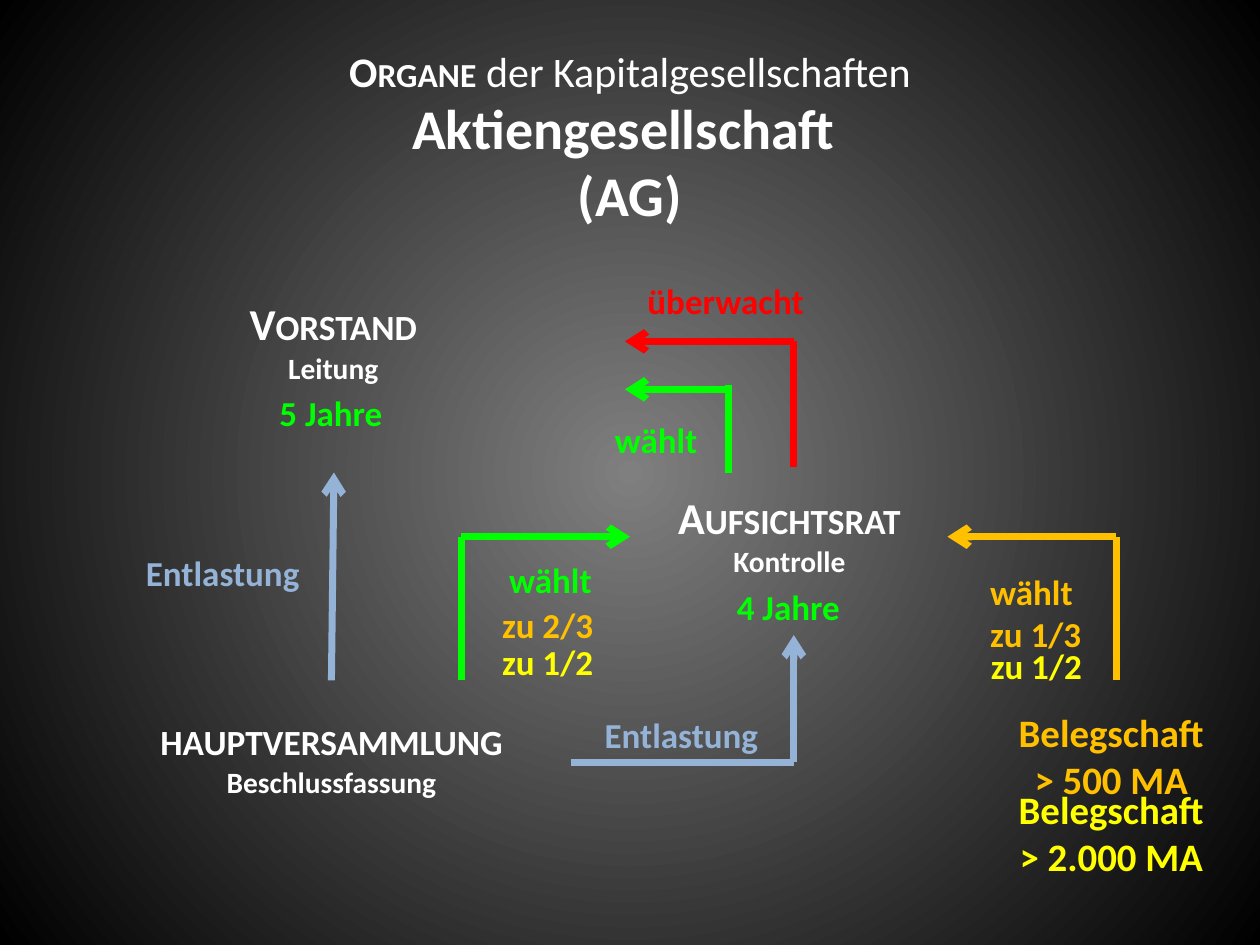
from lxml import etree
from pptx import Presentation
from pptx.dml.color import RGBColor
from pptx.enum import shapes, text
from pptx.oxml.ns import qn
from pptx.util import Pt

COLORS = {
    "white": "FFFFFF", "gray": "7F7F7F", "black": "000000", "red": "FF0000",
    "green": "00FF00", "gold": "FFC000", "yellow": "FFFF00", "blue": "95B3D7",
}
FONT = "Calibri"
BAND = 51.1  # height of titles and organ boxes
ROW = 31.7   # height of a one-line label


def rgb(name):
    return RGBColor.from_string(COLORS[name])


def paint(slide):
    """Give the slide a round gradient, light in the middle."""
    fill = slide.background.fill
    fill.gradient()
    for stop, pos, name in zip(fill.gradient_stops, (0, 1), ("gray", "black")):
        stop.position = pos
        stop.color.rgb = rgb(name)
    lin = next(slide.element.iter(qn("a:lin")))
    path = etree.Element(qn("a:path"), {"path": "circle"})
    sides = {side: "50000" for side in "ltrb"}
    etree.SubElement(path, qn("a:fillToRect"), sides)
    lin.getparent().replace(lin, path)


def write(frame, lines, color, align):
    """Fill a frame; each line is a list of (words, size, bold, small caps)."""
    for i, line in enumerate(lines):
        para = frame.paragraphs[0] if i == 0 else frame.add_paragraph()
        para.alignment = align
        for words, size, bold, small in line:
            run = para.add_run()
            run.text = words
            font = run.font
            font.name, font.size, font.bold = FONT, Pt(size), bold
            font.color.rgb = rgb(color)
            if small:
                run._r.get_or_add_rPr().set("cap", "small")


def center(shape, lines, color="white"):
    frame = shape.text_frame
    frame.word_wrap = True
    frame.auto_size = text.MSO_AUTO_SIZE.NONE
    frame.vertical_anchor = text.MSO_ANCHOR.MIDDLE
    write(frame, lines, color, text.PP_ALIGN.CENTER)


def title(slide):
    shape = slide.shapes.title
    shape.left, shape.top = Pt(54), Pt(15.1)
    shape.width, shape.height = Pt(612), Pt(BAND)
    center(shape, [[("Organe", 24, True, True),
                    (" der Kapitalgesellschaften", 24, False, False)]])


def block(slide, x, y, wide, lines, color="white"):
    box = slide.shapes.add_textbox(Pt(x), Pt(y), Pt(wide), Pt(BAND))
    center(box, lines, color)


def organ(slide, x, y, wide, name, task):
    block(slide, x, y, wide, [[(name, 25.2, True, True)],
                              [(task, 16.8, True, False)]])


def staff(slide, y, count, color):
    block(slide, 510.5, y, 249.1, [[("Belegschaft", 22.2, True, False)],
                                   [(count, 22.2, True, False)]], color)


def label(slide, x, y, wide, lines, color, align=text.PP_ALIGN.LEFT):
    high = ROW + 24 * (len(lines) - 1)
    box = slide.shapes.add_textbox(Pt(x), Pt(y), Pt(wide), Pt(high))
    frame = box.text_frame
    frame.word_wrap = False
    frame.auto_size = text.MSO_AUTO_SIZE.SHAPE_TO_FIT_TEXT
    write(frame, [[(line, 20, True, False)] for line in lines], color, align)


def line(slide, start, end, color, arrow=False):
    link = slide.shapes.add_connector(
        shapes.MSO_CONNECTOR.STRAIGHT, *(Pt(v) for v in (*start, *end)))
    link.line.width = Pt(4)
    link.line.color.rgb = rgb(color)
    if arrow:
        etree.SubElement(link.line._get_or_add_ln(), qn("a:tailEnd"),
                         {"type": "arrow"})
    etree.SubElement(link._element.spPr, qn("a:effectLst"))


def route(slide, color, *points):
    """Draw joined lines with an arrowhead at the last point."""
    last = len(points) - 2
    for i, (start, end) in enumerate(zip(points, points[1:])):
        line(slide, start, end, color, arrow=i == last)


def main():
    deck = Presentation()
    deck.slide_width, deck.slide_height = Pt(720), Pt(540)
    slide = deck.slides.add_slide(deck.slide_layouts[5])
    paint(slide)
    title(slide)
    block(slide, 54, 66.2, 612, [[("Aktiengesellschaft ", 32, True, False)],
                                 [("(AG)", 32, True, False)]])

    organ(slide, 20.2, 406, 338.4, "hauptversammlung", "Beschlussfassung")
    organ(slide, 37.4, 169.2, 306, "Vorstand", "Leitung")
    organ(slide, 326.2, 280, 249.8, "Aufsichtsrat", "Kontrolle")
    staff(slide, 406, "> 500 MA", "gold")
    staff(slide, 450, "> 2.000 MA", "yellow")

    route(slide, "gold", (637.9, 388.8), (637.9, 306.7), (541.4, 306.7))
    route(slide, "red", (453.6, 267.1), (453.6, 195.1), (357.1, 195.1))
    route(slide, "green", (263.5, 388.8), (263.5, 306.7), (360, 306.7))
    line(slide, (414.7, 222.5), (357.1, 222.5), "green", arrow=True)
    line(slide, (416.2, 220.3), (416.2, 270), "green")
    route(slide, "blue", (189.4, 388.8), (190.8, 270))
    route(slide, "blue", (326.2, 435.6), (453.6, 435.6), (453.6, 362.9))

    mid = text.PP_ALIGN.CENTER
    label(slide, 283.7, 315.4, 66.2, ["wählt "], "green", mid)
    label(slide, 558.7, 322.6, 67, ["wählt", "zu 1/3"], "gold")
    label(slide, 362.9, 156.2, 104.4, ["überwacht"], "red")
    label(slide, 279.4, 341.3, 67, ["zu 2/3"], "gold", mid)
    label(slide, 344.2, 235.4, 66.2, ["wählt"], "green")
    label(slide, 414, 331.2, 74.2, ["4 Jahre"], "green")
    label(slide, 152.6, 220.3, 74.2, ["5 Jahre"], "green")
    label(slide, 76.3, 311.8, 103, ["Entlastung"], "blue")
    label(slide, 338.4, 403.9, 103, ["Entlastung"], "blue")
    label(slide, 279.4, 362.2, 67, ["zu 1/2"], "yellow", mid)
    label(slide, 558.7, 365, 67, ["zu 1/2"], "yellow", mid)
    deck.save("out.pptx")


if __name__ == "__main__":
    main()
